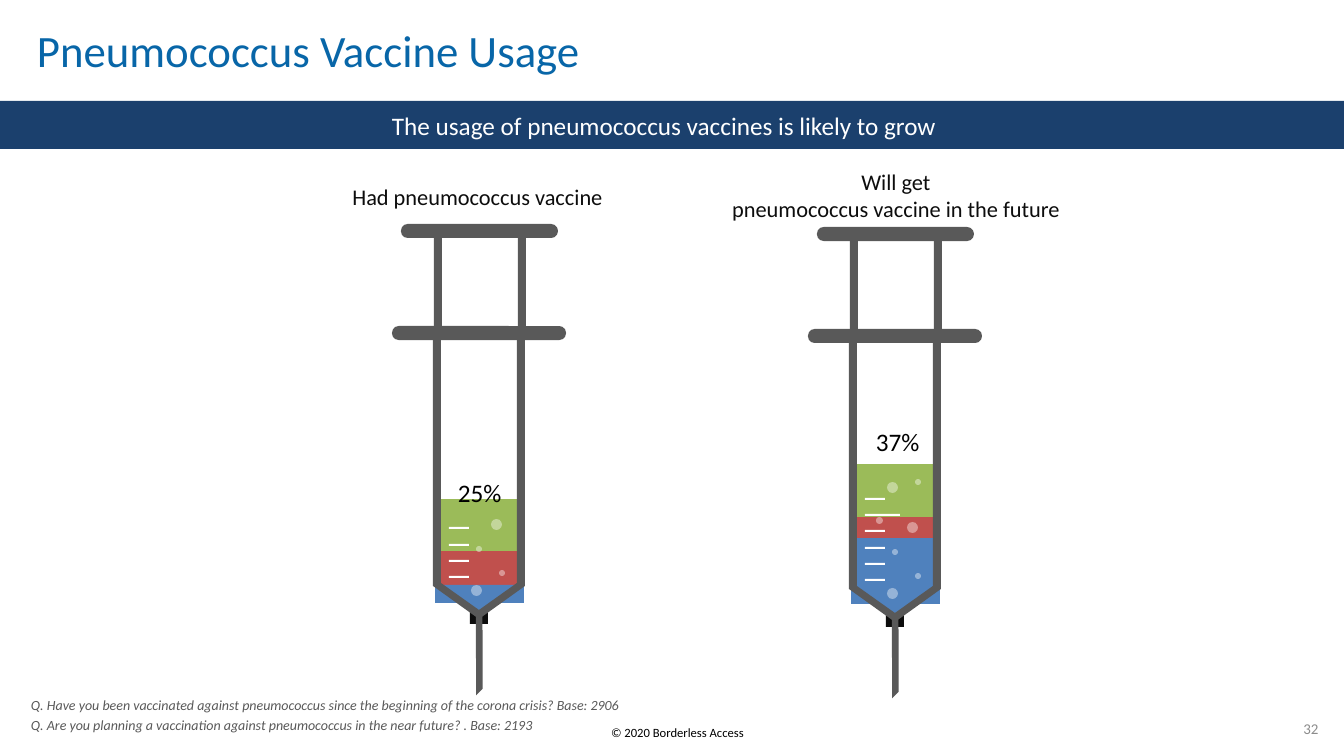
from dataclasses import dataclass

from lxml.etree import SubElement
from pptx import Presentation
from pptx.chart.data import CategoryChartData
from pptx.dml.color import RGBColor
from pptx.enum.chart import XL_CHART_TYPE
from pptx.enum.shapes import MSO_SHAPE
from pptx.enum.text import MSO_ANCHOR, PP_ALIGN
from pptx.oxml.ns import qn
from pptx.shapes.autoshape import Shape
from pptx.slide import Slide
from pptx.util import Pt

EMU_PER_PX = 914400 / 100.8
FONT = "Calibri"
COLORS = {
    "title": "0866A8", "band": "1B406D", "white": "FFFFFF", "black": "000000",
    "ink": "0D0D0D", "steel": "595959", "page": "8C8C8C",
    "blue": "4F81BD", "red": "C0504D", "green": "9BBB59",
}
LAYERS = ("blue", "red", "green")

Box = tuple[int, int, int, int]
Point = tuple[int, int]


@dataclass(frozen=True)
class Label:
    text: str
    box: Box
    size: float
    color: str
    align: PP_ALIGN = PP_ALIGN.LEFT
    anchor: MSO_ANCHOR = MSO_ANCHOR.TOP
    inset: bool = True
    italic: bool = False
    line_spacing: float = 1.0
    gap: int = 0


@dataclass(frozen=True)
class Bubble:
    x: int
    y: int
    size: int


@dataclass(frozen=True)
class Syringe:
    x: int
    y: int
    shares: tuple[int, int, int]
    chart_top: int
    chart_height: int
    ticks: tuple[int, ...]
    bubbles: tuple[Bubble, ...] = ()


BARREL = [(-46, 362), (-46, 115), (-38, 115), (-38, 359), (0, 386),
          (38, 359), (38, 115), (46, 115), (46, 362), (0, 395)]
PLUNGER_OUTER = [(-45, 2), (47, 2), (47, 113), (-45, 113)]
PLUNGER_INNER = [(-37, 12), (-37, 103), (39, 103), (39, 12)]
COMMON_BUBBLES = (Bubble(12, 295, 11), Bubble(20, 346, 6),
                  Bubble(-3, 322, 6), Bubble(-8, 361, 11))
SYRINGES = [
    Syringe(479, 224, (17, 33, 50), 497, 108, (20, 20, 20, 20)),
    Syringe(895, 227, (47, 15, 38), 461, 146, (20, 20, 20, 20, 35, 20),
            (Bubble(20, 252, 6), Bubble(-8, 255, 11), Bubble(-19, 290, 7))),
]

FRAME_LABELS = [
    Label("© 2020 Borderless Access", (489, 720, 377, 25), 9, "black", PP_ALIGN.CENTER),
    Label("Pneumococcus Vaccine Usage", (37, 31, 1137, 46), 32, "title",
          anchor=MSO_ANCHOR.MIDDLE, inset=False, line_spacing=0.85),
    Label("32", (1302, 720, 18, 18), 10.7, "page", PP_ALIGN.CENTER,
          MSO_ANCHOR.MIDDLE, inset=False),
    Label("Q. Have you been vaccinated against pneumococcus since the beginning "
          "of the corona crisis? Base: 2906\n"
          "Q. Are you planning a vaccination against pneumococcus in the near "
          "future? . Base: 2193",
          (31, 696, 1281, 37), 10, "steel", anchor=MSO_ANCHOR.BOTTOM,
          inset=False, italic=True, gap=2),
    Label("The usage of pneumococcus vaccines is likely to grow",
          (382, 105, 580, 40), 18, "white"),
]
SYRINGE_LABELS = [
    Label("Had pneumococcus vaccine", (341, 178, 273, 37), 16, "ink",
          PP_ALIGN.CENTER, MSO_ANCHOR.MIDDLE),
    Label("25%", (448, 472, 65, 40), 18, "black"),
    Label("37%", (866, 421, 65, 40), 18, "black"),
    Label("Will get\npneumococcus vaccine in the future", (720, 163, 352, 65), 16,
          "ink", PP_ALIGN.CENTER, MSO_ANCHOR.MIDDLE),
]


def px(n: int) -> int:
    return round(n * EMU_PER_PX)


def rgb(name: str) -> RGBColor:
    return RGBColor.from_string(COLORS[name])


def paint(sp: Shape, color: str) -> Shape:
    sp.shadow.inherit = False
    sp.fill.solid()
    sp.fill.fore_color.rgb = rgb(color)
    sp.line.fill.background()
    return sp


def add_preset(s: Slide, kind: MSO_SHAPE, box: Box, color: str) -> Shape:
    return paint(s.shapes.add_shape(kind, *map(px, box)), color)


def add_outline(s: Slide, origin: Point, contours: list[list[Point]]) -> Shape:
    rings = [[(origin[0] + x, origin[1] + y) for x, y in ring] for ring in contours]
    fb = s.shapes.build_freeform(*rings[0][0], scale=EMU_PER_PX)
    for i, ring in enumerate(rings):
        if i:
            fb.move_to(*ring[0])
        fb.add_line_segments(ring[1:], close=True)
    return paint(fb.convert_to_shape(), "steel")


def add_label(s: Slide, label: Label) -> None:
    tf = s.shapes.add_textbox(*map(px, label.box)).text_frame
    tf.word_wrap = True
    tf.vertical_anchor = label.anchor
    if not label.inset:
        tf.margin_left = tf.margin_top = tf.margin_right = tf.margin_bottom = 0
    tf.text = label.text
    for i, p in enumerate(tf.paragraphs):
        p.alignment = label.align
        p.line_spacing = label.line_spacing
        if i:
            p.space_before = Pt(label.gap)
        for r in p.runs:
            r.font.name = FONT
            r.font.size = Pt(label.size)
            r.font.italic = label.italic
            r.font.color.rgb = rgb(label.color)


def add_liquid(s: Slide, box: Box, shares: tuple[int, int, int]) -> None:
    data = CategoryChartData()
    data.categories = ["1"]
    for i, share in enumerate(shares, 1):
        data.add_series(f"Series {i}", [share])
    chart = s.shapes.add_chart(
        XL_CHART_TYPE.COLUMN_STACKED_100, *map(px, box), data).chart
    chart.has_legend = False
    chart.has_title = False
    chart.font.name = FONT
    chart.font.size = Pt(18)
    chart.font.color.rgb = rgb("black")
    chart.value_axis.has_major_gridlines = False
    chart.value_axis.visible = False
    chart.category_axis.visible = False
    plot = chart.plots[0]
    plot.vary_by_categories = False
    plot.gap_width = 150
    plot.overlap = 100
    for series, color in zip(plot.series, LAYERS):
        series.format.fill.solid()
        series.format.fill.fore_color.rgb = rgb(color)


def add_bubble(s: Slide, x: int, y: int, size: int) -> None:
    sp = add_preset(s, MSO_SHAPE.OVAL, (x, y, size, size), "white")
    clr = sp.fill._xPr.find(qn("a:solidFill"))[0]
    SubElement(clr, qn("a:alpha")).set("val", "40000")


def add_syringe(s: Slide, syringe: Syringe) -> None:
    x, y = syringe.x, syringe.y
    add_liquid(s, (x - 115, syringe.chart_top, 231, syringe.chart_height), syringe.shares)
    add_preset(s, MSO_SHAPE.RECTANGLE, (x - 9, y + 388, 18, 12), "ink")
    tip = add_preset(s, MSO_SHAPE.ISOSCELES_TRIANGLE, (x - 38, y + 361, 77, 26), "blue")
    tip.rotation = 180
    needle = add_preset(s, MSO_SHAPE.DIAGONAL_STRIPE, (x - 33, y + 398, 60, 61), "steel")
    needle.adjustments[0] = 0.846
    needle.rotation = 224.3
    needle._element.spPr.find(qn("a:xfrm")).set("flipV", "1")
    add_outline(s, (x, y), [BARREL])
    for top, width in ((102, 174), (0, 157)):
        flange = add_preset(s, MSO_SHAPE.ROUNDED_RECTANGLE,
                            (x - width // 2, y + top, width, 14), "steel")
        flange.adjustments[0] = 0.478
    add_outline(s, (x, y), [PLUNGER_OUTER, PLUNGER_INNER])
    for i, width in enumerate(syringe.ticks):
        add_preset(s, MSO_SHAPE.RECTANGLE,
                   (x - 30, y + 352 - i * 49 // 3, width, 2), "white")
    for b in COMMON_BUBBLES + syringe.bubbles:
        add_bubble(s, x + b.x, y + b.y, b.size)


def main() -> None:
    prs = Presentation()
    prs.slide_width, prs.slide_height = px(1344), px(756)
    s = prs.slides.add_slide(prs.slide_layouts[6])
    add_preset(s, MSO_SHAPE.RECTANGLE, (0, 101, 1344, 48), "band")
    for label in FRAME_LABELS:
        add_label(s, label)
    for syringe in SYRINGES:
        add_syringe(s, syringe)
    for label in SYRINGE_LABELS:
        add_label(s, label)
    prs.save("out.pptx")


if __name__ == "__main__":
    main()
